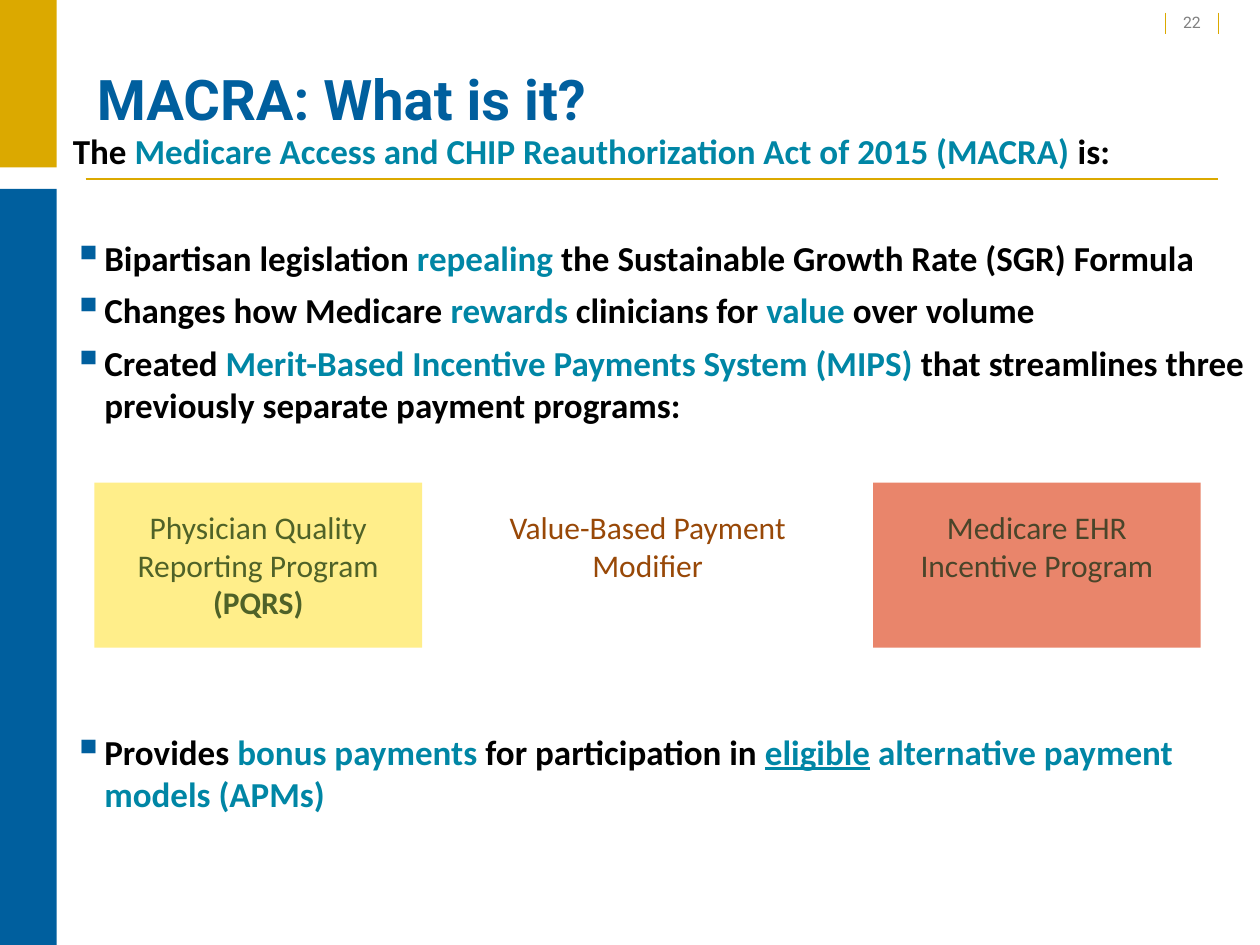
"""Build the slide that explains what MACRA is."""
from dataclasses import dataclass

from lxml import etree
from pptx import Presentation
from pptx.dml.color import RGBColor
from pptx.enum import shapes, text
from pptx.oxml import ns
from pptx.util import Inches, Pt


@dataclass(frozen=True)
class Theme:
    gold: str = "DBA900"
    blue: str = "005F9E"
    teal: str = "0086A5"
    black: str = "000000"
    grey: str = "808080"
    heading_font: str = "Roboto"
    body_font: str = "Calibri"
    title_size: int = 32
    body_size: int = 20
    program_size: int = 18
    number_size: int = 9


THEME = Theme()

TITLE = "MACRA: What is it?"
PAGE_NUMBER = "22"
# Runs are (text, style); styles: "" plain, "t" teal, "u" underlined, "b" bold.
STATEMENTS = [
    {"runs": [("The ", ""), ("Medicare Access and CHIP Reauthorization Act of 2015 (MACRA)", "t"),
              (" is:", "")], "bullet": False},
    {"runs": [("Bipartisan legislation ", ""), ("repealing", "t"),
              (" the Sustainable Growth Rate (SGR) Formula", "")], "before": 31},
    {"runs": [("Changes how Medicare ", ""), ("rewards", "t"), (" clinicians for ", ""),
              ("value", "t"), (" over volume", "")]},
    {"runs": [("Created", ""), (" Merit-Based Incentive Payments System (MIPS) ", "t"),
              ("that streamlines three previously separate payment programs:", "")]},
    {"runs": [("Provides ", ""), ("bonus payments", "t"), (" for participation in ", ""),
              ("eligible", "tu"), (" alternative payment models (APMs)", "t")], "before": 168},
]
PROGRAMS = [
    ([[("Physician Quality Reporting Program", ""), (" (PQRS)", "b")]], "FFEE8A", "4F6228"),
    ([[("Value-Based Payment Modifier", "")]], "FFFFFF", "984807"),
    ([[("Medicare EHR", "")], [("Incentive Program", "")]], "E9856B", "4A452A"),
]
PROGRAM_LEFT, PROGRAM_TOP, PROGRAM_WIDTH, PROGRAM_HEIGHT, PROGRAM_STEP = 0.75, 3.83, 2.6, 1.31, 3.09
BANDS = [((0, 0, 0.45, 1.33), THEME.gold), ((0, 1.5, 0.45, 6), THEME.blue)]
RULES = [((0.68, 1.42, 9.67, 1.42), 1), ((9.67, 0.1, 9.67, 0.27), 0.75),
         ((9.25, 0.1, 9.25, 0.27), 0.75)]


def add_rule(slide, ends, weight):
    rule = slide.shapes.add_connector(shapes.MSO_CONNECTOR.STRAIGHT, *map(Inches, ends))
    rule.line.color.rgb = RGBColor.from_string(THEME.gold)
    rule.line.width = Pt(weight)
    etree.SubElement(rule._element.spPr, ns.qn("a:effectLst"))


def add_block(slide, place, fill):
    block = slide.shapes.add_shape(shapes.MSO_SHAPE.RECTANGLE, *map(Inches, place))
    block.shadow.inherit = False
    block.fill.solid()
    block.fill.fore_color.rgb = RGBColor.from_string(fill)
    block.line.fill.background()
    return block


def add_bullet(paragraph):
    props = paragraph._p.get_or_add_pPr()
    props.set("marL", str(Inches(0.25)))
    props.set("indent", str(-Inches(0.25)))
    colour = etree.SubElement(props, ns.qn("a:buClr"))
    etree.SubElement(colour, ns.qn("a:srgbClr"), val=THEME.blue)
    etree.SubElement(props, ns.qn("a:buSzPct"), val="120000")
    etree.SubElement(props, ns.qn("a:buChar"), char="▪")


def write(holder, paragraphs, *, size, colour, font=THEME.body_font, bold=False,
          align=text.PP_ALIGN.LEFT, anchor=text.MSO_ANCHOR.TOP, inset=None, after=0):
    frame = holder.text_frame
    frame.word_wrap = True
    frame.vertical_anchor = anchor
    if inset is not None:
        frame.margin_left = frame.margin_right = Inches(inset)
        frame.margin_top = frame.margin_bottom = Inches(inset)
    for index, content in enumerate(paragraphs):
        paragraph = frame.add_paragraph() if index else frame.paragraphs[0]
        paragraph.alignment = align
        paragraph.space_after = Pt(after)
        if content.get("before"):
            paragraph.space_before = Pt(content["before"])
        if content.get("bullet"):
            add_bullet(paragraph)
        for words, style in content["runs"]:
            run = paragraph.add_run()
            run.text = words
            run.font.name, run.font.size = font, Pt(size)
            run.font.bold = bold or "b" in style
            run.font.underline = "u" in style
            run.font.color.rgb = RGBColor.from_string(THEME.teal if "t" in style else colour)


def add_text(slide, place, paragraphs, **style):
    write(slide.shapes.add_textbox(*map(Inches, place)), paragraphs, **style)


def main():
    deck = Presentation()
    deck.slide_width, deck.slide_height = Inches(10), Inches(7.5)
    slide = deck.slides.add_slide(deck.slide_layouts[6])
    for ends, weight in RULES:
        add_rule(slide, ends, weight)
    for place, fill in BANDS:
        add_block(slide, place, fill)
    add_text(slide, (0.67, 0.3, 9, 0.95), [{"runs": [(TITLE, "")]}], size=THEME.title_size,
             colour=THEME.blue, font=THEME.heading_font, bold=True,
             anchor=text.MSO_ANCHOR.MIDDLE)
    add_text(slide, (0.48, 0.98, 9.5, 5.7), [{"bullet": True, **item} for item in STATEMENTS],
             size=THEME.body_size, colour=THEME.black, bold=True, after=6)
    for column, (lines, fill, colour) in enumerate(PROGRAMS):
        left = PROGRAM_LEFT + column * PROGRAM_STEP
        program = add_block(slide, (left, PROGRAM_TOP, PROGRAM_WIDTH, PROGRAM_HEIGHT), fill)
        write(program, [{"runs": runs} for runs in lines], size=THEME.program_size,
              colour=colour, align=text.PP_ALIGN.CENTER, inset=0.2)
    add_text(slide, (9.19, 0.1, 0.54, 0.2), [{"runs": [(PAGE_NUMBER, "")]}],
             size=THEME.number_size, colour=THEME.grey, font=THEME.heading_font,
             align=text.PP_ALIGN.CENTER, anchor=text.MSO_ANCHOR.BOTTOM)
    deck.save("out.pptx")


if __name__ == "__main__":
    main()
